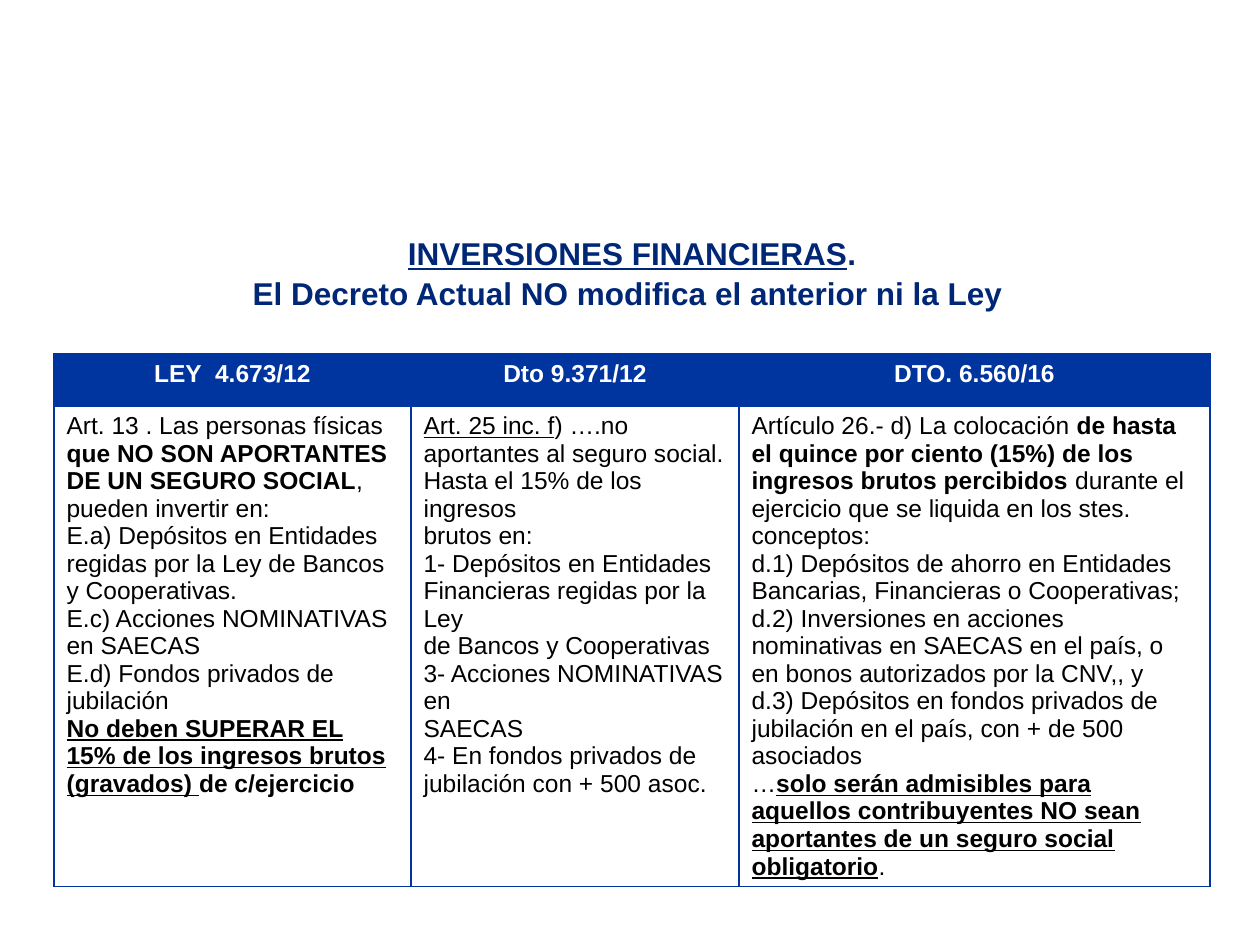
from typing import NamedTuple

from lxml.etree import SubElement
from pptx import Presentation
from pptx.dml.color import RGBColor
from pptx.enum.text import MSO_ANCHOR, PP_ALIGN
from pptx.oxml.ns import qn
from pptx.util import Emu, Pt

PX_PER_INCH = 126
FONT = "Arial"
NAVY = RGBColor(0x00, 0x27, 0x76)
BLUE = RGBColor(0x00, 0x34, 0x9E)
WHITE = RGBColor(0xFF, 0xFF, 0xFF)
BLACK = RGBColor(0x00, 0x00, 0x00)

LEFT, WIDTH = 54, 1156
TITLE_TOP, TITLE_HEIGHT = 228, 89
TABLE_TOP = 354
ROW_HEIGHTS = (52, 423)


class Span(NamedTuple):
    text: str
    bold: bool = False
    underline: bool = False


class Style(NamedTuple):
    size: int
    color: RGBColor
    align: PP_ALIGN


class Column(NamedTuple):
    width: int
    heading: str
    body: list[list[Span]]


TITLE_STYLE = Style(18, NAVY, PP_ALIGN.CENTER)
HEADING_STYLE = Style(14, WHITE, PP_ALIGN.CENTER)
BODY_STYLE = Style(14, BLACK, PP_ALIGN.LEFT)

TITLE = [
    [Span("INVERSIONES FINANCIERAS", True, True), Span(".", True)],
    [Span("El Decreto Actual NO modifica el anterior ni la Ley ", True)],
]

COLUMNS = [
    Column(357, "LEY  4.673/12", [
        [Span("Art. 13 . Las personas físicas "),
         Span("que NO SON APORTANTES DE UN SEGURO SOCIAL", True),
         Span(", pueden invertir en:")],
        [Span("E.a) Depósitos en Entidades regidas por la Ley de Bancos y Cooperativas.")],
        [Span("E.c) Acciones NOMINATIVAS en SAECAS")],
        [Span("E.d) Fondos privados de jubilación")],
        [Span("No deben SUPERAR EL 15% de los ingresos brutos (gravados) ", True, True),
         Span("de c/ejercicio", True)],
    ]),
    Column(328, "Dto 9.371/12", [
        [Span("Art. 25 inc. f", underline=True), Span(") ….no")],
        [Span("aportantes al seguro social.")],
        [Span("Hasta el 15% de los ingresos")],
        [Span("brutos en:")],
        [Span("1- Depósitos en Entidades")],
        [Span("Financieras regidas por la Ley")],
        [Span("de Bancos y Cooperativas")],
        [Span("3- Acciones NOMINATIVAS en")],
        [Span("SAECAS")],
        [Span("4- En fondos privados de")],
        [Span("jubilación con + 500 asoc.")],
    ]),
    Column(471, "DTO. 6.560/16", [
        [Span("Artículo 26.- d) La colocación "),
         Span("de hasta el quince por ciento (15%) de los ingresos brutos percibidos", True),
         Span(" durante el ejercicio que se liquida en los stes. conceptos:")],
        [Span("d.1) Depósitos de ahorro en Entidades Bancarias, Financieras o Cooperativas;")],
        [Span("d.2) Inversiones en acciones nominativas en SAECAS en el país, "
              "o en bonos autorizados por la CNV,, y")],
        [Span("d.3) Depósitos en fondos privados de jubilación en el país, "
              "con + de 500 asociados")],
        [Span("…"),
         Span("solo serán admisibles para aquellos contribuyentes NO sean "
              "aportantes de un seguro social obligatorio", True, True),
         Span(".")],
    ]),
]


def px(length: int) -> Emu:
    return Emu(round(length * 914400 / PX_PER_INCH))


def write_text(text_frame, lines: list[list[Span]], style: Style) -> None:
    for index, line in enumerate(lines):
        paragraph = text_frame.paragraphs[0] if index == 0 else text_frame.add_paragraph()
        paragraph.alignment = style.align
        paragraph.space_before = Pt(0)
        for span in line:
            run = paragraph.add_run()
            run.text = span.text
            run.font.name = FONT
            run.font.size = Pt(style.size)
            run.font.color.rgb = style.color
            run.font.bold = span.bold
            run.font.underline = span.underline


def add_borders(cell, color: RGBColor, width: Pt) -> None:
    properties = cell._tc.get_or_add_tcPr()
    for side in ("a:lnL", "a:lnR", "a:lnT", "a:lnB"):
        line = SubElement(properties, qn(side), w=str(width))
        fill = SubElement(line, qn("a:solidFill"))
        SubElement(fill, qn("a:srgbClr"), val=str(color))


def add_title(slide) -> None:
    title = slide.shapes.title
    title.left, title.top = px(LEFT), px(TITLE_TOP)
    title.width, title.height = px(WIDTH), px(TITLE_HEIGHT)
    title.text_frame.word_wrap = True
    title.text_frame.vertical_anchor = MSO_ANCHOR.TOP
    write_text(title.text_frame, TITLE, TITLE_STYLE)
    title.text_frame.paragraphs[1].space_before = Pt(1)


def add_comparison_table(slide) -> None:
    table = slide.shapes.add_table(
        len(ROW_HEIGHTS), len(COLUMNS),
        px(LEFT), px(TABLE_TOP), px(WIDTH), px(sum(ROW_HEIGHTS)),
    ).table
    for row, height in zip(table.rows, ROW_HEIGHTS):
        row.height = px(height)
    for index, column in enumerate(COLUMNS):
        table.columns[index].width = px(column.width)
        heading, body = table.cell(0, index), table.cell(1, index)
        for cell, color in ((heading, BLUE), (body, WHITE)):
            add_borders(cell, BLUE, Pt(1))
            cell.fill.solid()
            cell.fill.fore_color.rgb = color
        write_text(heading.text_frame, [[Span(column.heading, True)]], HEADING_STYLE)
        write_text(body.text_frame, column.body, BODY_STYLE)


def main() -> None:
    presentation = Presentation()
    presentation.slide_width = px(1260)
    presentation.slide_height = px(945)
    slide = presentation.slides.add_slide(presentation.slide_layouts[5])
    add_comparison_table(slide)
    add_title(slide)
    presentation.save("out.pptx")


if __name__ == "__main__":
    main()
